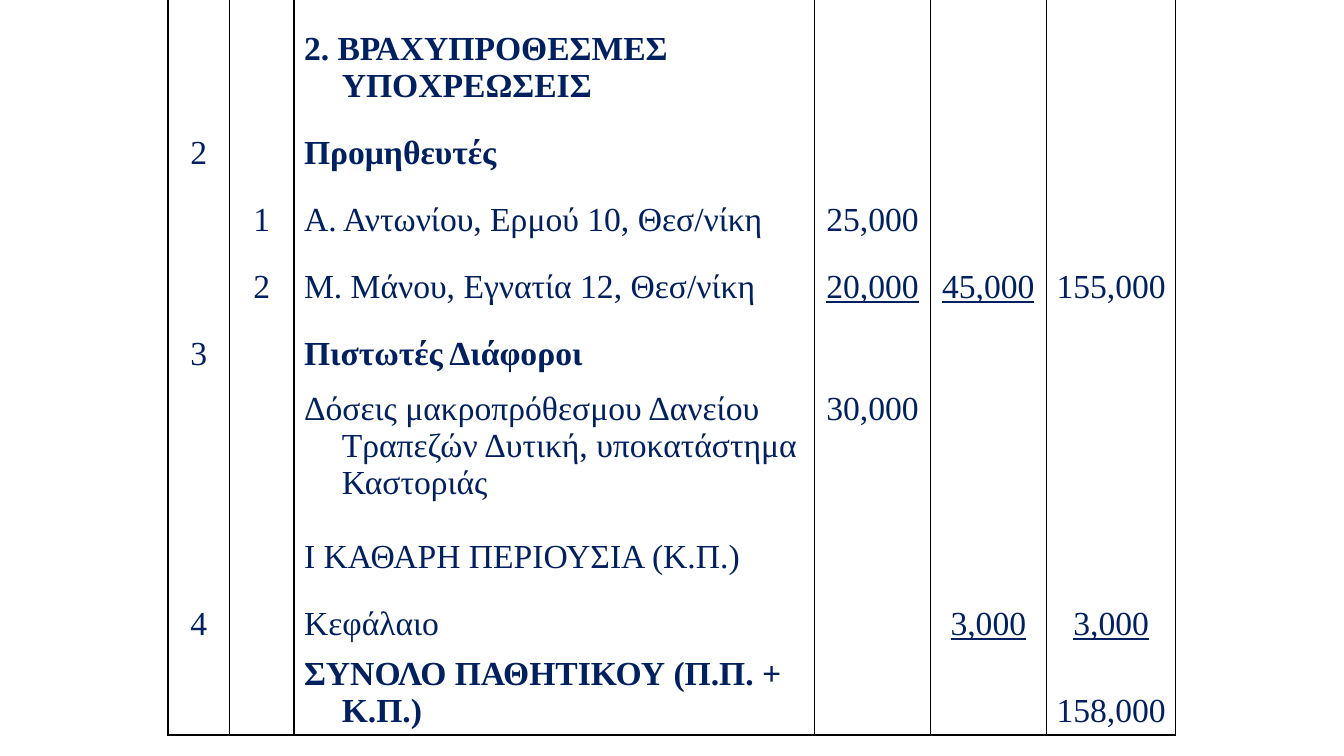
import pptx
import pptx.util
import pptx.dml.color
import pptx.enum.text
import pptx.oxml.ns
from lxml import etree

Pt = pptx.util.Pt
COLORS = {"text": "002060", "border": "000000"}
FONT, SIZE, LINE = "Times New Roman", 24, 26.4
HANG, MARGIN_X, MARGIN_Y = 27, 7.2, 3.6
NO_STYLE = "{2D5ABB26-0587-4C30-8999-92F81FD0307C}"

# Content: account, sub-account, description, three amounts
ROWS = [
    ("", "", "2. ΒΡΑΧΥΠΡΟΘΕΣΜΕΣ ΥΠΟΧΡΕΩΣΕΙΣ", "", "", ""),
    ("2", "", "Προμηθευτές", "", "", ""),
    ("", "1", "Α. Αντωνίου, Ερμού 10, Θεσ/νίκη", "25,000", "", ""),
    ("", "2", "Μ. Μάνου, Εγνατία 12, Θεσ/νίκη", "20,000", "45,000", "155,000"),
    ("3", "", "Πιστωτές Διάφοροι", "", "", ""),
    ("", "", "Δόσεις μακροπρόθεσμου Δανείου Τραπεζών Δυτική, υποκατάστημα Καστοριάς\n"
             "Ι ΚΑΘΑΡΗ ΠΕΡΙΟΥΣΙΑ (Κ.Π.)", "30,000", "", ""),
    ("4", "", "Κεφάλαιο", "", "3,000", "3,000"),
    ("", "", "ΣΥΝΟΛΟ ΠΑΘΗΤΙΚΟΥ (Π.Π. + Κ.Π.)", "", "", "158,000"),
]
DESCRIPTION = 2
LOAN_ROW, LAST_ROW = 5, len(ROWS) - 1
BOLD = {(row, DESCRIPTION) for row in (0, 1, 4, 7)}
UNDERLINED = {(3, 3), (3, 4), (6, 4), (6, 5)}
COL_WIDTHS = [44, 46, 372, 82.5, 83, 92.5]
ROW_HEIGHTS = [78.4] + [47.86] * 4 + [145, 47.86, 62.4]


def add_border(cell, side):
    ln = etree.SubElement(cell._tc.get_or_add_tcPr(), pptx.oxml.ns.qn("a:ln" + side), w=str(Pt(1)))
    fill = etree.SubElement(ln, pptx.oxml.ns.qn("a:solidFill"))
    etree.SubElement(fill, pptx.oxml.ns.qn("a:srgbClr"), val=COLORS["border"])


def format_cell(cell, row, col):
    cell.vertical_anchor = pptx.enum.text.MSO_ANCHOR.BOTTOM
    cell.margin_left = cell.margin_right = Pt(MARGIN_X)
    cell.margin_top = cell.margin_bottom = Pt(MARGIN_Y)
    for i, p in enumerate(cell.text_frame.paragraphs):
        if col == DESCRIPTION:
            pPr = p._p.get_or_add_pPr()
            pPr.set("marL", str(Pt(HANG)))
            pPr.set("indent", str(-Pt(HANG)))
        else:
            p.alignment = pptx.enum.text.PP_ALIGN.CENTER
        if i:
            p.space_before = Pt(LINE)
        for r in p.runs:
            r.font.name, r.font.size = FONT, Pt(SIZE)
            r.font.color.rgb = pptx.dml.color.RGBColor.from_string(COLORS["text"])
            r.font.bold = (row, col) in BOLD
            r.font.underline = (row, col) in UNDERLINED
    # Borders come before the fill
    for side in ("L", "R", "B") if row == LAST_ROW else ("L", "R"):
        add_border(cell, side)
    cell.fill.background()


prs = pptx.Presentation()
prs.slide_width, prs.slide_height = Pt(960), Pt(540)
s = prs.slides.add_slide(prs.slide_layouts[6])

# Balance sheet table, centred across the slide
width = sum(COL_WIDTHS)
frame = s.shapes.add_table(len(ROWS), len(COL_WIDTHS), Pt((960 - width) / 2), Pt(0),
                           Pt(width), Pt(sum(ROW_HEIGHTS)))
table = frame.table
table.first_row = table.horz_banding = False
table._tbl.tblPr.find(pptx.oxml.ns.qn("a:tableStyleId")).text = NO_STYLE
for column, w in zip(table.columns, COL_WIDTHS):
    column.width = Pt(w)
for table_row, h in zip(table.rows, ROW_HEIGHTS):
    table_row.height = Pt(h)
for row, values in enumerate(ROWS):
    for col, value in enumerate(values):
        cell = table.cell(row, col)
        cell.text_frame.text = value
        format_cell(cell, row, col)

# The loan amount sits level with the first of five lines
table.cell(LOAN_ROW, 3).margin_bottom = Pt(MARGIN_Y + 4 * LINE)

prs.save("out.pptx")
